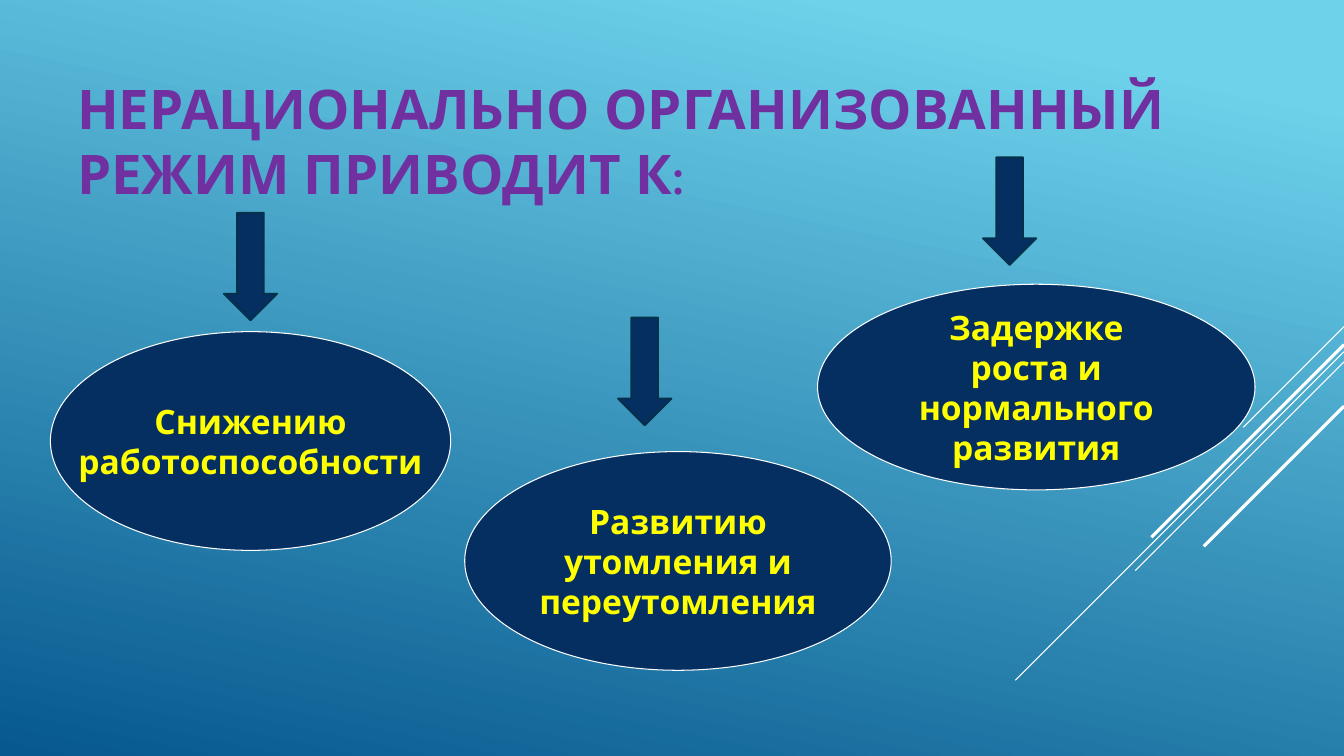
from dataclasses import dataclass

import lxml.etree
import pptx
import pptx.dml.color
import pptx.enum.shapes
import pptx.enum.text
import pptx.oxml.ns
import pptx.util

WIDTH = pptx.util.Inches(13.333)
HEIGHT = pptx.util.Inches(7.5)
FONT = "League Spartan"
COLORS = {
    "sky": "6ED2EB",
    "deep": "06588E",
    "navy": "052F61",
    "edge": "043148",
    "white": "FFFFFF",
    "yellow": "FFFF00",
    "purple": "7030A0",
}
KINDS = pptx.enum.shapes.MSO_SHAPE
ALIGN = pptx.enum.text.PP_ALIGN


@dataclass
class Box:
    """Place in percent of the slide's width and height."""
    left: float
    top: float
    width: float
    height: float

    def emu(self) -> tuple:
        return (across(self.left), down(self.top),
                across(self.width), down(self.height))


@dataclass
class Effect:
    lines: list
    oval: Box
    arrow: Box


@dataclass
class Ray:
    """Diagonal from the right edge: start height, run to the left, weight."""
    top: float
    run: float
    weight: float


ARROW = (3.98, 14.27)
EFFECTS = [
    Effect(["Снижению", "работоспособности"],
           Box(3.75, 43.87, 29.78, 28.93), Box(16.65, 28.13, *ARROW)),
    Effect(["Развитию", "утомления и", "переутомления"],
           Box(34.58, 59.73, 31.73, 28.93), Box(45.98, 42, *ARROW)),
    Effect(["Задержке", "роста и", "нормального", "развития"],
           Box(60.83, 37.6, 32.55, 27.2), Box(73.13, 20.8, *ARROW)),
]
RAYS = [
    Ray(43.2, 7.5, 0.75),
    Ray(46.53, 24.45, 0.75),
    Ray(47.87, 15.53, 0.75),
    Ray(45.6, 14.33, 2.25),
    Ray(53.73, 10.43, 2.25),
]
TITLE = Box(5, 8.93, 84.38, 19.2)


def across(share: float) -> int:
    return round(WIDTH * share / 100)


def down(share: float) -> int:
    return round(HEIGHT * share / 100)


def color(name: str) -> pptx.dml.color.RGBColor:
    return pptx.dml.color.RGBColor.from_string(COLORS[name])


def write(para, text: str, *, size: float, tint: str, bold: bool = True,
          align=ALIGN.LEFT) -> None:
    para.alignment = align
    run = para.add_run()
    run.text = text
    run.font.name = FONT
    run.font.size = pptx.util.Pt(size)
    run.font.bold = bold
    run.font.color.rgb = color(tint)


def paint(slide) -> None:
    """Fill the background with the sky gradient."""
    fill = slide.background.fill
    fill.gradient()
    fill.gradient_angle = 258
    for stop, name, place in zip(fill.gradient_stops, ("sky", "deep"), (0.1, 1)):
        stop.color.rgb = color(name)
        stop.position = place


def draw_ray(slide, ray: Ray) -> None:
    run = across(ray.run)
    top = down(ray.top)
    line = slide.shapes.add_connector(
        pptx.enum.shapes.MSO_CONNECTOR.STRAIGHT, WIDTH, top, WIDTH - run, top + run)
    line.line.color.rgb = color("white")
    line.line.width = pptx.util.Pt(ray.weight)
    lxml.etree.SubElement(line._element.spPr, pptx.oxml.ns.qn("a:effectLst"))


def draw_shape(slide, kind, box: Box, edge: str, weight: float):
    shape = slide.shapes.add_shape(kind, *box.emu())
    shape.shadow.inherit = False
    shape.fill.solid()
    shape.fill.fore_color.rgb = color("navy")
    shape.line.color.rgb = color(edge)
    shape.line.width = pptx.util.Pt(weight)
    return shape


def draw_title(slide) -> None:
    frame = slide.shapes.add_textbox(*TITLE.emu()).text_frame
    frame.word_wrap = True
    frame.vertical_anchor = pptx.enum.text.MSO_ANCHOR.MIDDLE
    para = frame.paragraphs[0]
    write(para, "НЕРАЦИОНАЛЬНО ОРГАНИЗОВАННЫЙ РЕЖИМ ПРИВОДИТ К",
          size=39, tint="purple")
    write(para, ":", size=39, tint="purple", bold=False)


def draw_effect(slide, effect: Effect) -> None:
    oval = draw_shape(slide, KINDS.OVAL, effect.oval, "white", 0.75)
    frame = oval.text_frame
    frame.word_wrap = False
    frame.vertical_anchor = pptx.enum.text.MSO_ANCHOR.MIDDLE
    for index, text in enumerate(effect.lines):
        para = frame.add_paragraph() if index else frame.paragraphs[0]
        write(para, text, size=24, tint="yellow", align=ALIGN.CENTER)
    draw_shape(slide, KINDS.DOWN_ARROW, effect.arrow, "edge", 1.25)


def main() -> None:
    deck = pptx.Presentation()
    deck.slide_width = WIDTH
    deck.slide_height = HEIGHT
    slide = deck.slides.add_slide(deck.slide_layouts[6])
    paint(slide)
    for ray in RAYS:
        draw_ray(slide, ray)
    draw_title(slide)
    for effect in EFFECTS:
        draw_effect(slide, effect)
    deck.save("out.pptx")


if __name__ == "__main__":
    main()
